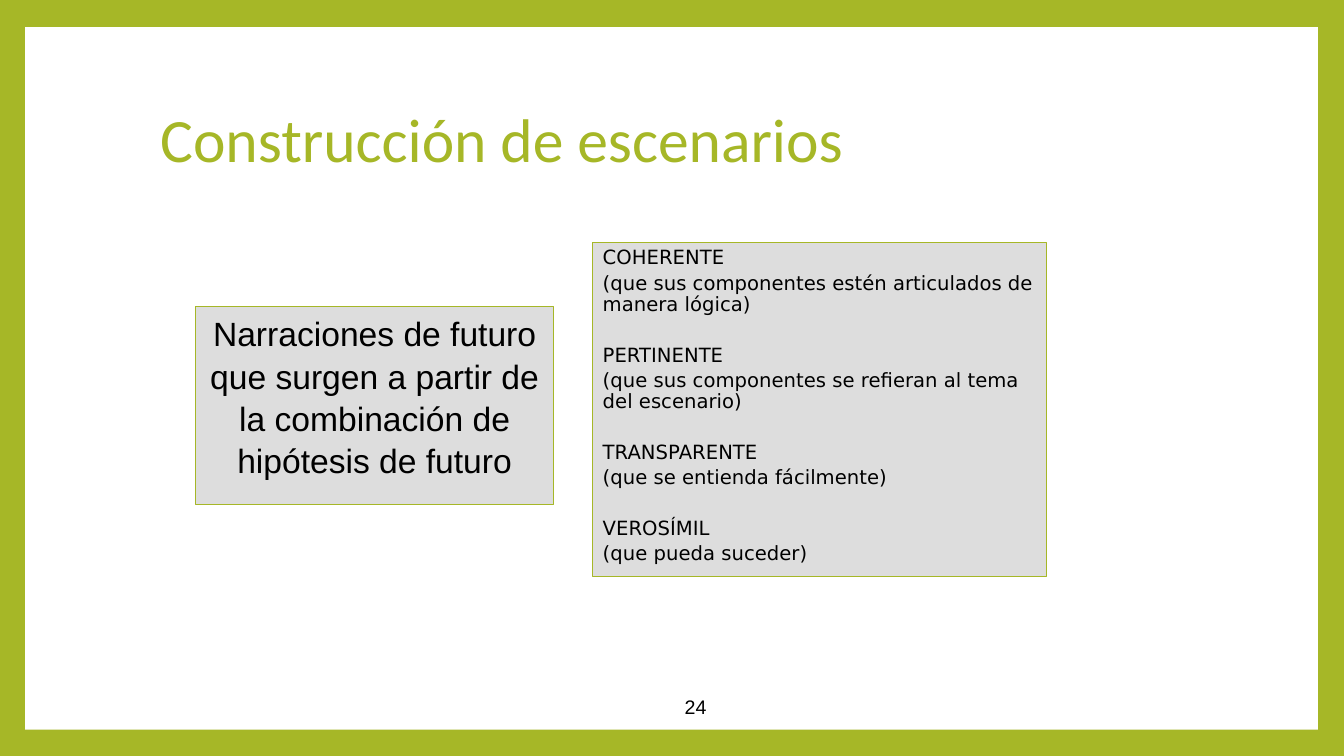
import pptx
import pptx.util
import pptx.dml.color
import pptx.enum.shapes
import pptx.enum.text
from dataclasses import dataclass

Inches, Pt = pptx.util.Inches, pptx.util.Pt
Align = pptx.enum.text.PP_ALIGN
Anchor = pptx.enum.text.MSO_ANCHOR


@dataclass(frozen=True)
class Theme:
    """Colours, fonts and type sizes."""
    green: str = "A6B727"
    white: str = "FFFFFF"
    grey: str = "DDDDDD"
    black: str = "000000"
    head: tuple = ("Calibri", 44)
    lead: tuple = ("Arial", 24)
    note: tuple = ("DejaVu Sans", 14)
    foot: tuple = ("Arial", 14)


class Deck:
    """Holds the theme and the current slide."""

    def __init__(self, theme):
        """Open a wide deck with one blank slide."""
        self.theme = theme
        self.show = pptx.Presentation()
        self.show.slide_width = Inches(13.33)
        self.show.slide_height = Inches(7.5)
        self.slide = self.show.slides.add_slide(self.show.slide_layouts[6])
        self.paint(self.slide.background.fill, theme.green)

    def paint(self, fill, tone):
        """Make a fill solid."""
        fill.solid()
        fill.fore_color.rgb = pptx.dml.color.RGBColor.from_string(tone)

    def panel(self, area, tone, edge=None):
        """Add a rectangle and return its text frame."""
        kind = pptx.enum.shapes.MSO_SHAPE.RECTANGLE
        box = self.slide.shapes.add_shape(kind, *map(Inches, area))
        box.shadow.inherit = False
        self.paint(box.fill, tone)
        if edge:
            self.paint(box.line.fill, edge)
            box.line.width = Pt(0.75)
        else:
            box.line.fill.background()
        box.text_frame.word_wrap = True
        box.text_frame.vertical_anchor = Anchor.TOP
        return box.text_frame

    def label(self, area):
        """Add a text box and return its text frame."""
        frame = self.slide.shapes.add_textbox(*map(Inches, area)).text_frame
        frame.word_wrap = True
        frame.vertical_anchor = Anchor.MIDDLE
        return frame

    def say(self, frame, text, style, tone, align=Align.LEFT, lead=1.0, gap=0):
        """Add one paragraph to a text frame."""
        first = frame.paragraphs[0]
        para = frame.add_paragraph() if first.runs else first
        para.add_run().text = text
        para.alignment = align
        para.line_spacing = lead
        para.space_before = Pt(gap)
        para.font.name, size = style
        para.font.size = Pt(size)
        self.paint(para.font.fill, tone)


TRAITS = [
    ("COHERENTE", "(que sus componentes estén articulados de manera lógica)"),
    ("PERTINENTE", "(que sus componentes se refieran al tema del escenario)"),
    ("TRANSPARENTE", "(que se entienda fácilmente)"),
    ("VEROSÍMIL", "(que pueda suceder)"),
]


def main():
    """Build and save the slide."""
    look = Theme()
    deck = Deck(look)
    deck.panel((0.25, 0.27, 12.82, 6.97), look.white)
    deck.say(deck.label((4.32, 6.81, 5.16, 0.4)), "24", look.foot,
             look.black, Align.CENTER)
    deck.say(deck.panel((1.94, 3.04, 3.55, 1.97), look.grey, look.green),
             "Narraciones de futuro que surgen a partir de la combinación "
             "de hipótesis de futuro",
             look.lead, look.black, Align.CENTER, 1.05, 5)
    traits = deck.panel((5.88, 2.41, 4.5, 3.31), look.grey, look.green)
    for rank, (name, sense) in enumerate(TRAITS):
        deck.say(traits, name, look.note, look.black, lead=0.9,
                 gap=21 if rank else 3)
        deck.say(traits, sense, look.note, look.black, lead=0.9, gap=3)
    deck.say(deck.label((1.49, 0.67, 10.69, 1.48)),
             "Construcción de escenarios", look.head, look.green, lead=0.9)
    deck.show.save("out.pptx")


if __name__ == "__main__":
    main()
